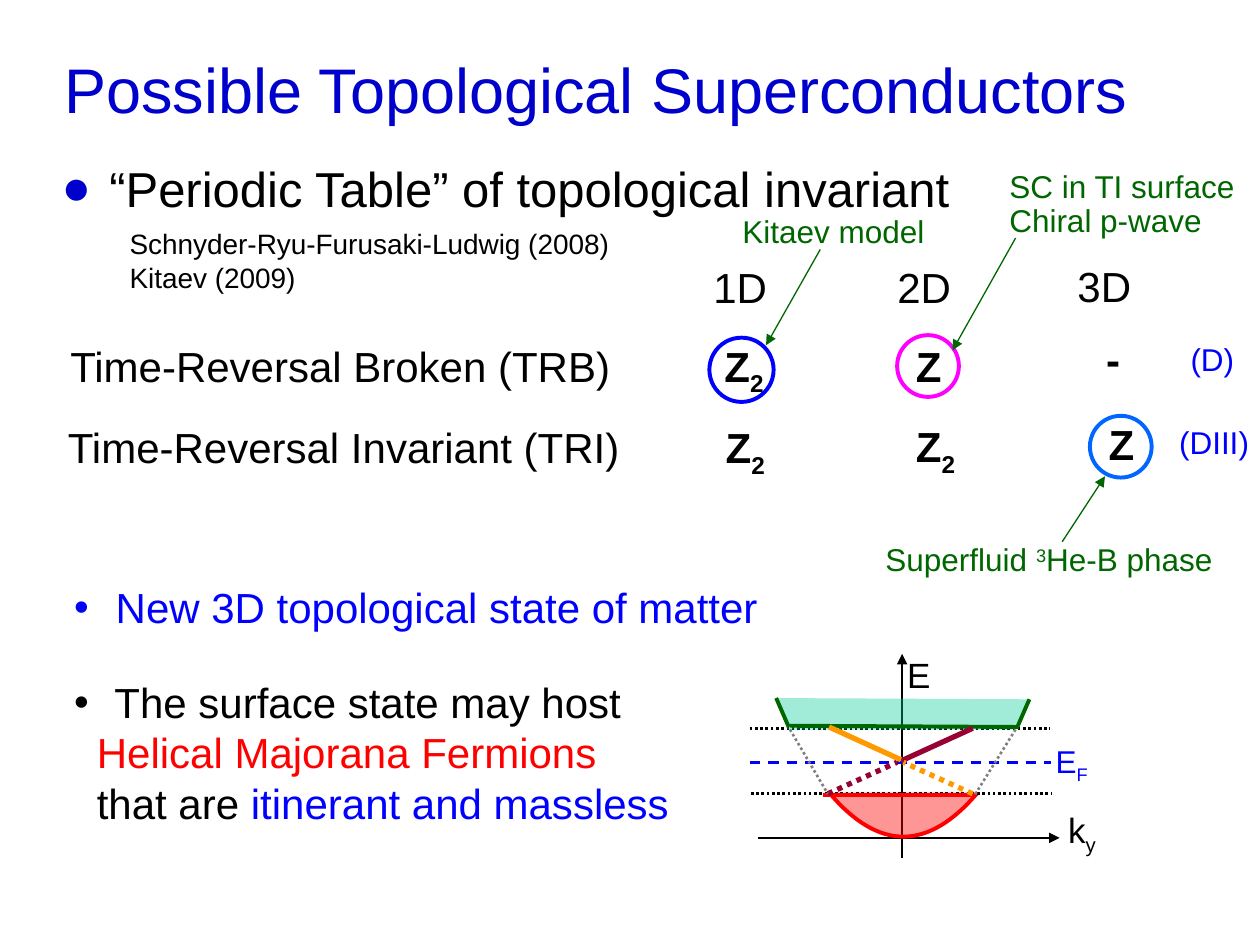
from dataclasses import dataclass

from lxml import etree
from pptx import Presentation
from pptx.dml.color import RGBColor
from pptx.enum.dml import MSO_LINE
from pptx.enum.shapes import MSO_CONNECTOR, MSO_SHAPE
from pptx.enum.text import MSO_ANCHOR, MSO_AUTO_SIZE, PP_ALIGN
from pptx.oxml.ns import qn
from pptx.shapes.base import BaseShape
from pptx.slide import Slide
from pptx.util import Inches, Pt

LEFT, CENTER = PP_ALIGN.LEFT, PP_ALIGN.CENTER
DASH, DOT = MSO_LINE.DASH, MSO_LINE.ROUND_DOT
FONT = "Arial"
BLACK = RGBColor(0x00, 0x00, 0x00)
GRAY = RGBColor(0x80, 0x80, 0x80)
BLUE = RGBColor(0x00, 0x00, 0xFF)
TITLE_BLUE = RGBColor(0x00, 0x00, 0xCC)
SKY = RGBColor(0x00, 0x66, 0xFF)
MAGENTA = RGBColor(0xFF, 0x00, 0xFF)
RED = RGBColor(0xFF, 0x00, 0x00)
MAROON = RGBColor(0x99, 0x00, 0x33)
ORANGE = RGBColor(0xFF, 0x99, 0x00)
GREEN = RGBColor(0x00, 0x66, 0x00)
MINT = RGBColor(0x00, 0xCC, 0x99)

Point = tuple[float, float]


@dataclass
class Span:
    text: str
    color: RGBColor | None = None
    baseline: int = 0


@dataclass
class Para:
    spans: list[Span]
    bullet: str = ""
    bullet_color: RGBColor | None = None
    margin: float = 0
    indent: float = 0


@dataclass
class Label:
    left: float
    top: float
    width: float
    height: float
    paras: list[Para]
    size: float = 24
    color: RGBColor = BLACK
    bold: bool = False
    align: PP_ALIGN = CENTER
    wrap: bool = False


@dataclass
class Stroke:
    start: Point
    end: Point
    color: RGBColor
    width: float = 1.5
    dash: MSO_LINE | None = None
    arrow: bool = False


def plain(text: str) -> list[Para]:
    """One paragraph per line of text."""
    return [Para([Span(line)]) for line in text.split("\n")]


def indexed(base: str, index: str) -> list[Para]:
    """A symbol with a subscript."""
    return [Para([Span(base), Span(index, baseline=-25)])]


def add_label(slide: Slide, label: Label) -> None:
    box = slide.shapes.add_textbox(Inches(label.left), Inches(label.top),
                                   Inches(label.width), Inches(label.height))
    frame = box.text_frame
    frame.word_wrap = label.wrap
    frame.auto_size = MSO_AUTO_SIZE.SHAPE_TO_FIT_TEXT
    for number, item in enumerate(label.paras):
        para = frame.add_paragraph() if number else frame.paragraphs[0]
        para.alignment = label.align
        properties = para._p.get_or_add_pPr()
        properties.set("marL", str(Inches(item.margin)))
        properties.set("indent", str(Inches(item.indent)))
        if item.bullet_color is not None:
            holder = etree.SubElement(properties, qn("a:buClr"))
            etree.SubElement(holder, qn("a:srgbClr"), val=str(item.bullet_color))
        if item.bullet:
            etree.SubElement(properties, qn("a:buFont"), typeface=FONT)
            etree.SubElement(properties, qn("a:buChar"), char=item.bullet)
        para.font.name = FONT
        para.font.size = Pt(label.size)
        para.font.bold = label.bold
        para.font.color.rgb = label.color
        for span in item.spans:
            run = para.add_run()
            run.text = span.text
            if span.color is not None:
                run.font.color.rgb = span.color
            if span.baseline:
                run._r.get_or_add_rPr().set("baseline", str(span.baseline * 1000))


def add_stroke(slide: Slide, stroke: Stroke) -> None:
    ends = [Inches(value) for value in (*stroke.start, *stroke.end)]
    line = slide.shapes.add_connector(MSO_CONNECTOR.STRAIGHT, *ends)
    line.line.color.rgb = stroke.color
    line.line.width = Pt(stroke.width)
    if stroke.dash is not None:
        line.line.dash_style = stroke.dash
    if stroke.arrow:
        etree.SubElement(line.line._get_or_add_ln(), qn("a:tailEnd"), type="triangle")
    etree.SubElement(line._element.spPr, qn("a:effectLst"))


def add_ring(slide: Slide, left: float, top: float, size: float, color: RGBColor) -> None:
    ring = slide.shapes.add_shape(MSO_SHAPE.OVAL, Inches(left), Inches(top),
                                  Inches(size), Inches(size))
    ring.shadow.inherit = False
    ring.fill.background()
    ring.line.color.rgb = color
    ring.line.width = Pt(2.25)


def add_region(slide: Slide, points: list[Point], color: RGBColor, opacity: int,
               closed: bool) -> BaseShape:
    """A translucent band without an outline."""
    start, *others = [(Inches(x), Inches(y)) for x, y in points]
    builder = slide.shapes.build_freeform(*start)
    builder.add_line_segments(others, close=closed)
    region = builder.convert_to_shape()
    region.shadow.inherit = False
    region.fill.solid()
    region.fill.fore_color.rgb = color
    tint = region._element.spPr.find(qn("a:solidFill")).find(qn("a:srgbClr"))
    etree.SubElement(tint, qn("a:alpha"), val=str(opacity * 1000))
    region.line.fill.background()
    return region


def add_title(slide: Slide, text: str) -> None:
    title = slide.shapes.title
    title.left, title.top = Inches(0.41), Inches(0.31)
    title.width, title.height = Inches(9.14), Inches(0.79)
    title.text_frame.vertical_anchor = MSO_ANCHOR.MIDDLE
    title.text_frame.text = text
    para = title.text_frame.paragraphs[0]
    para.alignment = LEFT
    para.font.name = FONT
    para.font.size = Pt(36)
    para.font.color.rgb = TITLE_BLUE


def add_valence_band(slide: Slide) -> None:
    center, bottom, half_width, depth, steps = 7.17, 6.64, 0.59, 0.35, 16
    offsets = [step / steps for step in range(-steps, steps + 1)]
    curve = [(center + half_width * x, bottom - depth * x * x) for x in offsets]
    band = add_region(slide, curve, RED, 41, closed=False)
    band.line.color.rgb = RED
    band.line.width = Pt(2.25)


HEADING = Para([Span("“Periodic Table” of topological invariant")],
               "●", TITLE_BLUE, 0.38, -0.38)
NEW_STATE = Para([Span("New 3D topological state of matter", BLUE)],
                 "•", margin=0.33, indent=-0.33)
SURFACE_STATE = [
    Para([Span("The surface state may host")], "•", margin=0.32, indent=-0.32),
    Para([Span("Helical Majorana Fermions", RED)], margin=0.18),
    Para([Span("that are "), Span("itinerant and massless", BLUE)], margin=0.18),
]
HELIUM = Para([Span("Superfluid "), Span("3", baseline=30), Span("He-B phase")])

LABELS = [
    Label(0.39, 1.21, 9.1, 0.72, [HEADING], 28, align=LEFT, wrap=True),
    Label(0.93, 1.75, 4.01, 0.64,
          plain("Schnyder-Ryu-Furusaki-Ludwig (2008)\nKitaev (2009)"), 16, align=LEFT),
    Label(0.46, 2.65, 4.5, 0.5, plain("Time-Reversal Broken (TRB)"), align=LEFT),
    Label(0.44, 3.3, 4.59, 0.5, plain("Time-Reversal Invariant (TRI)"), align=LEFT),
    Label(5.56, 2.03, 0.63, 0.5, plain("1D")),
    Label(7.02, 2.03, 0.63, 0.5, plain("2D")),
    Label(8.45, 2.02, 0.63, 0.5, plain("3D")),
    Label(5.64, 2.65, 0.53, 0.5, indexed("Z", "2"), bold=True),
    Label(7.17, 2.65, 0.4, 0.5, plain("Z"), bold=True),
    Label(8.68, 2.6, 0.31, 0.5, plain("-"), bold=True),
    Label(5.65, 3.3, 0.53, 0.5, indexed("Z", "2"), bold=True),
    Label(7.16, 3.29, 0.53, 0.5, indexed("Z", "2"), bold=True),
    Label(8.7, 3.27, 0.4, 0.5, plain("Z"), bold=True),
    Label(9.35, 2.65, 0.55, 0.4, plain("(D)"), 18, BLUE, align=LEFT),
    Label(9.26, 3.31, 0.76, 0.4, plain("(DIII)"), 18, BLUE, align=LEFT),
    Label(5.79, 1.63, 1.65, 0.4, plain("Kitaev model"), 18, GREEN),
    Label(7.91, 1.28, 1.99, 0.4, plain("SC in TI surface"), 18, GREEN),
    Label(7.91, 1.55, 1.73, 0.4, plain("Chiral p-wave"), 18, GREEN),
    Label(6.92, 4.24, 2.81, 0.4, [HELIUM], 18, GREEN),
    Label(0.49, 4.57, 5.64, 0.5, [NEW_STATE], align=LEFT, wrap=True),
    Label(0.49, 5.32, 5.48, 1.3, SURFACE_STATE, align=LEFT, wrap=True),
    Label(7.1, 5.14, 0.39, 0.43, plain("E"), 20, align=LEFT),
    Label(8.38, 6.37, 0.43, 0.43, indexed("k", "y"), 20, align=LEFT),
    Label(8.28, 5.84, 0.47, 0.4, indexed("E", "F"), 18, BLUE, align=LEFT),
]
RINGS = [(5.63, 2.68, 0.51, BLUE), (7.12, 2.66, 0.49, MAGENTA), (8.65, 3.3, 0.49, SKY)]
AXES_AND_POINTERS = [
    Stroke((6.51, 1.98), (6.08, 2.74), GREEN, 0.75, arrow=True),
    Stroke((8.06, 1.89), (7.56, 2.78), GREEN, 0.75, arrow=True),
    Stroke((8.43, 4.3), (8.77, 3.78), GREEN, 0.75, arrow=True),
    Stroke((6.02, 6.65), (8.41, 6.65), BLACK, arrow=True),
    Stroke((7.16, 6.81), (7.16, 5.19), BLACK, arrow=True),
]
LEVELS = [
    Stroke((5.95, 6.05), (8.34, 6.05), BLUE, dash=DASH),
    Stroke((5.96, 6.3), (8.35, 6.3), BLACK, dash=DOT),
    Stroke((5.95, 5.78), (8.33, 5.78), BLACK, dash=DOT),
]
CONDUCTION_BAND = [(6.16, 5.54), (6.25, 5.79), (8.05, 5.79), (8.17, 5.55)]
BAND_EDGES = [
    Stroke((6.16, 5.54), (6.26, 5.77), GREEN, 2.25),
    Stroke((8.17, 5.55), (8.07, 5.78), GREEN, 2.25),
    Stroke((6.27, 5.76), (8.08, 5.77), GREEN, 2.25),
    Stroke((6.53, 6.31), (7.75, 6.31), RED, 2.25),
    Stroke((6.57, 6.3), (7.12, 6.05), MAROON, 3, DOT),
    Stroke((7.15, 6.04), (7.72, 5.78), MAROON, 3),
    Stroke((6.27, 5.79), (6.57, 6.3), GRAY, dash=DOT),
    Stroke((8.06, 5.79), (7.73, 6.32), GRAY, dash=DOT),
    Stroke((7.72, 6.3), (7.17, 6.05), ORANGE, 3, DOT),
    Stroke((7.15, 6.03), (6.58, 5.77), ORANGE, 3),
]

deck = Presentation()
deck.slide_width, deck.slide_height = Inches(10), Inches(7.5)
page = deck.slides.add_slide(deck.slide_layouts[5])
add_title(page, "Possible Topological Superconductors")
for entry in LABELS:
    add_label(page, entry)
for ring in RINGS:
    add_ring(page, *ring)
for entry in AXES_AND_POINTERS:
    add_stroke(page, entry)
add_valence_band(page)
for entry in LEVELS:
    add_stroke(page, entry)
add_region(page, CONDUCTION_BAND, MINT, 37, closed=True)
for entry in BAND_EDGES:
    add_stroke(page, entry)
deck.save("out.pptx")
